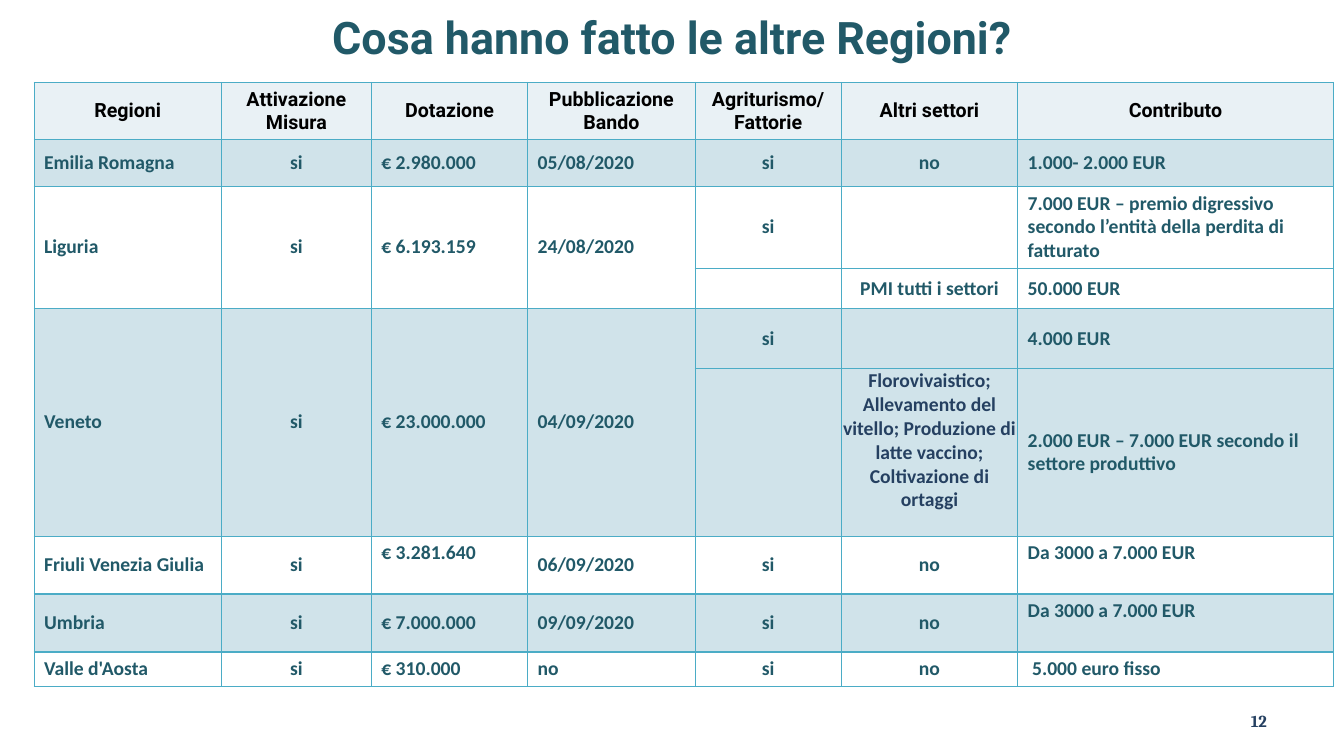
from lxml import etree
from pptx import Presentation
from pptx.dml.color import RGBColor
from pptx.enum.text import MSO_ANCHOR, PP_ALIGN
from pptx.oxml.ns import qn
from pptx.util import Cm, Pt

LEFT, CENTER, RIGHT = PP_ALIGN.LEFT, PP_ALIGN.CENTER, PP_ALIGN.RIGHT
TOP, MIDDLE = MSO_ANCHOR.TOP, MSO_ANCHOR.MIDDLE

TEAL, NAVY, BLACK = "215968", "254061", "000000"
HEADER_FILL, BAND_FILL, BORDER = "E9F1F5", "D0E3EA", "4BACC6"

COL_WIDTHS = [4.72, 3.78, 3.94, 4.22, 3.68, 4.45, 7.95]
ROW_HEIGHTS = [1.43, 1.18, 2.07, 1.01, 1.51, 4.23, 1.46, 1.46, 0.86]
CENTERED_COLS = {1, 4, 5}
BANDED_ROWS = {1, 4, 5, 7}
MERGED_ROWS = [(2, 3), (4, 5)]
MERGED_COLS = range(4)
OTHER_SECTORS = (5, 5)
TOP_CELLS = {OTHER_SECTORS, (6, 2), (6, 6), (7, 6)}

ROWS = [
    ["Regioni", "Attivazione Misura", "Dotazione", "Pubblicazione Bando",
     "Agriturismo/Fattorie", "Altri settori", "Contributo"],
    ["Emilia Romagna", "si", "€ 2.980.000", "05/08/2020", "si", "no",
     "1.000- 2.000 EUR"],
    ["Liguria", "si", "€ 6.193.159", "24/08/2020", "si", "",
     "7.000 EUR – premio digressivo secondo l’entità della perdita di fatturato"],
    ["", "", "", "", "", "PMI tutti i settori", "50.000 EUR"],
    ["Veneto", "si", "€ 23.000.000", "04/09/2020", "si", "", "4.000 EUR"],
    ["", "", "", "", "",
     "Florovivaistico; Allevamento del vitello; Produzione di latte vaccino; "
     "Coltivazione di ortaggi",
     "2.000 EUR – 7.000 EUR secondo il settore produttivo"],
    ["Friuli Venezia Giulia", "si", "€ 3.281.640", "06/09/2020", "si", "no",
     "Da 3000 a 7.000 EUR"],
    ["Umbria", "si", "€ 7.000.000", "09/09/2020", "si", "no",
     "Da 3000 a 7.000 EUR"],
    ["Valle d'Aosta", "si", "€ 310.000", "no", "si", "no", "5.000 euro fisso"],
]
LAST_ROW = len(ROWS) - 1


def rgb(color):
    return RGBColor.from_string(color)


def write(tf, text, size, font, color, align):
    p = tf.paragraphs[0]
    p.alignment = align
    r = p.add_run()
    r.text = text
    r.font.size, r.font.name, r.font.bold = Pt(size), font, True
    r.font.color.rgb = rgb(color)


def set_margins(cell, side, vertical):
    cell.margin_left = cell.margin_right = Cm(side)
    cell.margin_top = cell.margin_bottom = Cm(vertical)


def set_borders(cell):
    tcPr = cell._tc.get_or_add_tcPr()
    # Border lines must come before the cell fill
    for i, tag in enumerate(("a:lnL", "a:lnR", "a:lnT", "a:lnB")):
        ln = etree.Element(qn(tag), w=str(Pt(1)))
        fill = etree.SubElement(ln, qn("a:solidFill"))
        etree.SubElement(fill, qn("a:srgbClr"), val=BORDER)
        tcPr.insert(i, ln)


def add_title(s, left, top, width, height):
    sp = s.shapes.title
    sp.left, sp.top, sp.width, sp.height = Cm(left), Cm(top), Cm(width), Cm(height)
    tf = sp.text_frame
    tf.word_wrap = True
    tf.vertical_anchor = MIDDLE
    write(tf, "Cosa hanno fatto le altre Regioni?", 32, "Roboto", TEAL, CENTER)


def format_cell(cell, row, col, text):
    # Fill and outline
    if row == 0 or row in BANDED_ROWS:
        cell.fill.solid()
        cell.fill.fore_color.rgb = rgb(BAND_FILL if row else HEADER_FILL)
    else:
        cell.fill.background()
    set_borders(cell)

    # Margins
    if not text:
        set_margins(cell, 0, 0)
        return
    if (row, col) == OTHER_SECTORS:
        set_margins(cell, 0.02, 0.02)
    elif row == LAST_ROW:
        set_margins(cell, 0.36 if col == 6 else 0.25, 0.02)
    else:
        set_margins(cell, 0.25, 0.13)

    # Text
    cell.vertical_anchor = TOP if (row, col) in TOP_CELLS else MIDDLE
    align = CENTER if row == 0 or col in CENTERED_COLS else LEFT
    font, color = ("Calibri", TEAL) if row else ("Roboto", BLACK)
    if (row, col) == OTHER_SECTORS:
        color = NAVY
    write(cell.text_frame, text, 14, font, color, align)


def add_regions_table(s, left, top):
    frame = s.shapes.add_table(len(ROWS), len(COL_WIDTHS), Cm(left), Cm(top),
                               Cm(sum(COL_WIDTHS)), Cm(sum(ROW_HEIGHTS)))
    table = frame.table
    table.first_row = table.horz_banding = False
    for column, width in zip(table.columns, COL_WIDTHS):
        column.width = Cm(width)
    for line, height in zip(table.rows, ROW_HEIGHTS):
        line.height = Cm(height)
    for first, last in MERGED_ROWS:
        for col in MERGED_COLS:
            table.cell(first, col).merge(table.cell(last, col))
    for row, texts in enumerate(ROWS):
        for col, text in enumerate(texts):
            format_cell(table.cell(row, col), row, col, text)


def add_page_number(s, left, top, width, height):
    sp = s.shapes.add_textbox(Cm(left), Cm(top), Cm(width), Cm(height))
    tf = sp.text_frame
    tf.word_wrap = True
    tf.vertical_anchor = MIDDLE
    write(tf, "12", 12, "Cambria", NAVY, RIGHT)


def main():
    prs = Presentation()
    prs.slide_width, prs.slide_height = Cm(33.87), Cm(19.05)
    s = prs.slides.add_slide(prs.slide_layouts[5])
    add_title(s, 1.7, -0.03, 30.48, 1.9)
    add_regions_table(s, 0.86, 2.08)
    add_page_number(s, 24.28, 17.65, 7.9, 1.02)
    prs.save("out.pptx")


if __name__ == "__main__":
    main()
